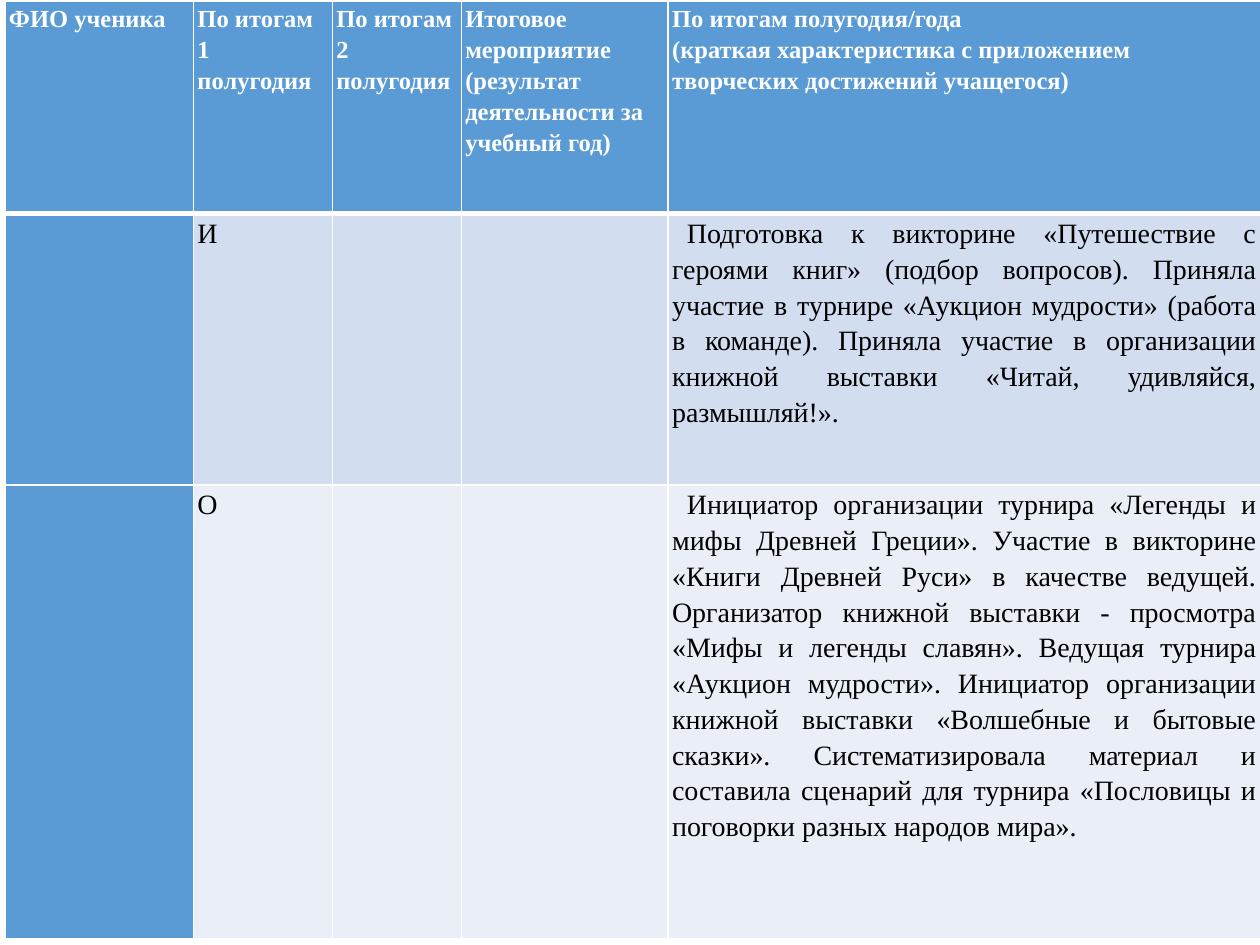
from lxml import etree
from pptx import Presentation
from pptx.dml.color import RGBColor
from pptx.enum.text import PP_ALIGN
from pptx.oxml.ns import qn
from pptx.util import Cm, Pt

LEFT, JUST = PP_ALIGN.LEFT, PP_ALIGN.JUSTIFY
COLORS = {
    "white": "FFFFFF",
    "black": "000000",
    "blue": "5B9BD5",
    "dark": "D2DEEF",
    "light": "EAEFF7",
}
FONT = "Times New Roman"
COLS = [3.8, 2.8, 2.6, 4.17, 11.94]
ROWS = [4.28, 5.47, 9.14]
BANDS = ["blue", "dark", "light"]
HEAD = {"size": Pt(14), "bold": True, "name": FONT}
BODY = {"size": Pt(16), "bold": False, "name": FONT}
INSETS = {
    "margin_left": Cm(0.08),
    "margin_right": Cm(0.08),
    "margin_top": 0,
    "margin_bottom": 0,
}
# Each cell is a list of paragraphs.
CELLS = [
    [
        ["ФИО ученика"],
        ["По итогам 1 полугодия"],
        ["По итогам 2 полугодия"],
        ["Итоговое мероприятие", "(результат деятельности за учебный год)"],
        [
            "По итогам полугодия/года",
            "(краткая характеристика с приложением творческих достижений учащегося)",
        ],
    ],
    [
        [],
        ["И"],
        [],
        [],
        [
            "Подготовка к викторине «Путешествие с героями книг» (подбор вопросов). "
            "Приняла участие в турнире «Аукцион мудрости» (работа в команде). "
            "Приняла участие в организации книжной выставки «Читай, удивляйся, "
            "размышляй!»."
        ],
    ],
    [
        [],
        ["О"],
        [],
        [],
        [
            "Инициатор организации турнира «Легенды и мифы Древней Греции». "
            "Участие в викторине «Книги Древней Руси» в качестве ведущей. "
            "Организатор книжной выставки - просмотра «Мифы и легенды славян». "
            "Ведущая турнира «Аукцион мудрости». Инициатор организации книжной "
            "выставки «Волшебные и бытовые сказки». Систематизировала материал и "
            "составила сценарий для турнира «Пословицы и поговорки разных народов "
            "мира»."
        ],
    ],
]


def color(name):
    return RGBColor.from_string(COLORS[name])


def apply(target, values):
    for key, value in values.items():
        setattr(target, key, value)


def add_edges(cell, widths):
    """Draw white cell borders; widths maps a side letter to points."""
    props = cell._tc.get_or_add_tcPr()
    for side, width in widths.items():
        line = etree.SubElement(props, qn(f"a:ln{side}"), w=str(Pt(width)))
        fill = etree.SubElement(line, qn("a:solidFill"))
        etree.SubElement(fill, qn("a:srgbClr"), val=COLORS["white"])


def add_text(cell, lines, style, ink, align):
    frame = cell.text_frame
    for i, text in enumerate(lines):
        para = frame.add_paragraph() if i else frame.paragraphs[0]
        apply(para, {"alignment": align, "line_spacing": 1.15})
        if align == JUST:
            para._p.get_or_add_pPr().set("indent", str(Cm(0.3)))
        run = para.add_run()
        run.text = text
        apply(run.font, style)
        run.font.color.rgb = color(ink)


def fill_cell(cell, row, col, lines):
    head = row == 0
    add_edges(cell, {"L": 1, "R": 1, "T": 3 if row == 1 else 1, "B": 3 if head else 1})
    cell.fill.solid()
    cell.fill.fore_color.rgb = color("blue" if col == 0 else BANDS[row])
    apply(cell, INSETS)
    last = col == len(COLS) - 1
    add_text(
        cell,
        lines,
        HEAD if head else BODY,
        "white" if head else "black",
        JUST if last and not head else LEFT,
    )


def add_grid(slide):
    frame = slide.shapes.add_table(
        len(ROWS), len(COLS), Cm(0.1), Cm(0.03), Cm(sum(COLS)), Cm(sum(ROWS))
    )
    table = frame.table
    apply(table, {"first_col": True, "horz_banding": False})
    for col, width in zip(table.columns, COLS):
        col.width = Cm(width)
    for row, height in zip(table.rows, ROWS):
        row.height = Cm(height)
    for r, cells in enumerate(CELLS):
        for c, lines in enumerate(cells):
            fill_cell(table.cell(r, c), r, c, lines)


def main():
    deck = Presentation()
    apply(deck, {"slide_width": Cm(25.4), "slide_height": Cm(19.05)})
    add_grid(deck.slides.add_slide(deck.slide_layouts[6]))
    deck.save("out.pptx")


if __name__ == "__main__":
    main()
